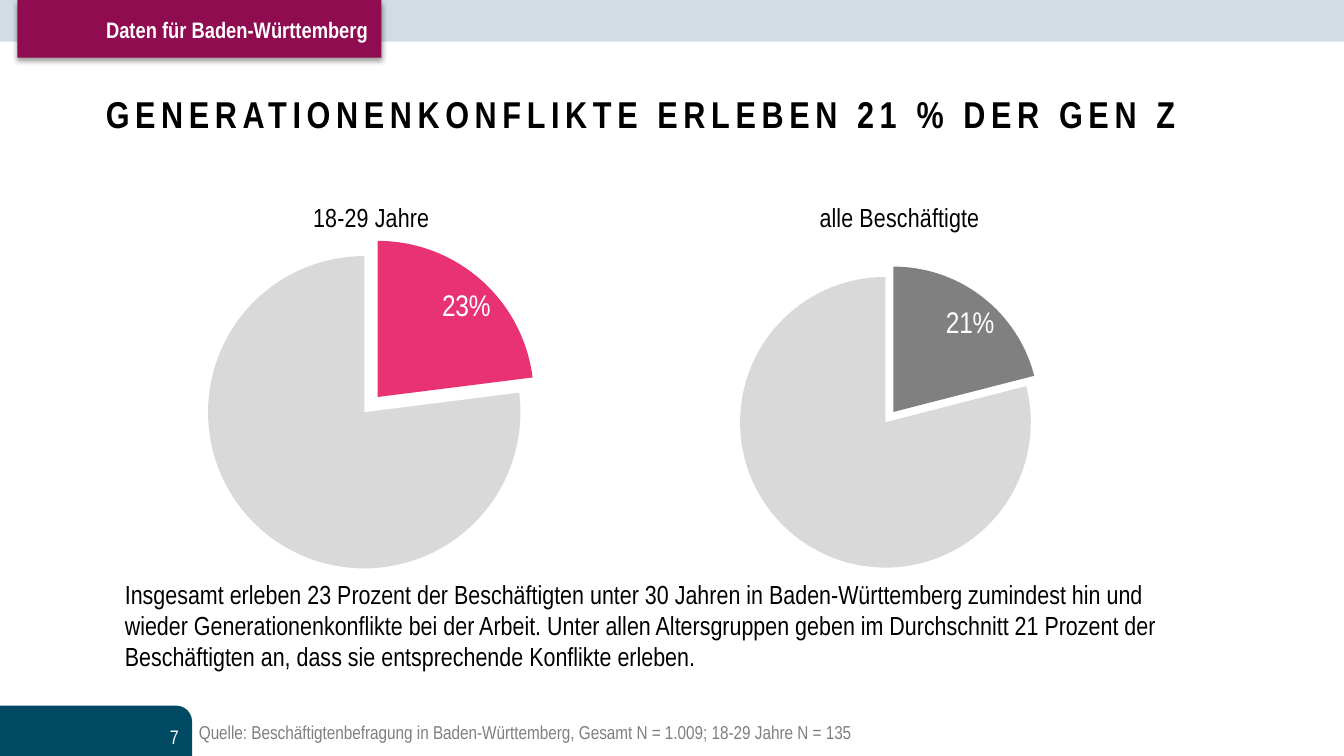
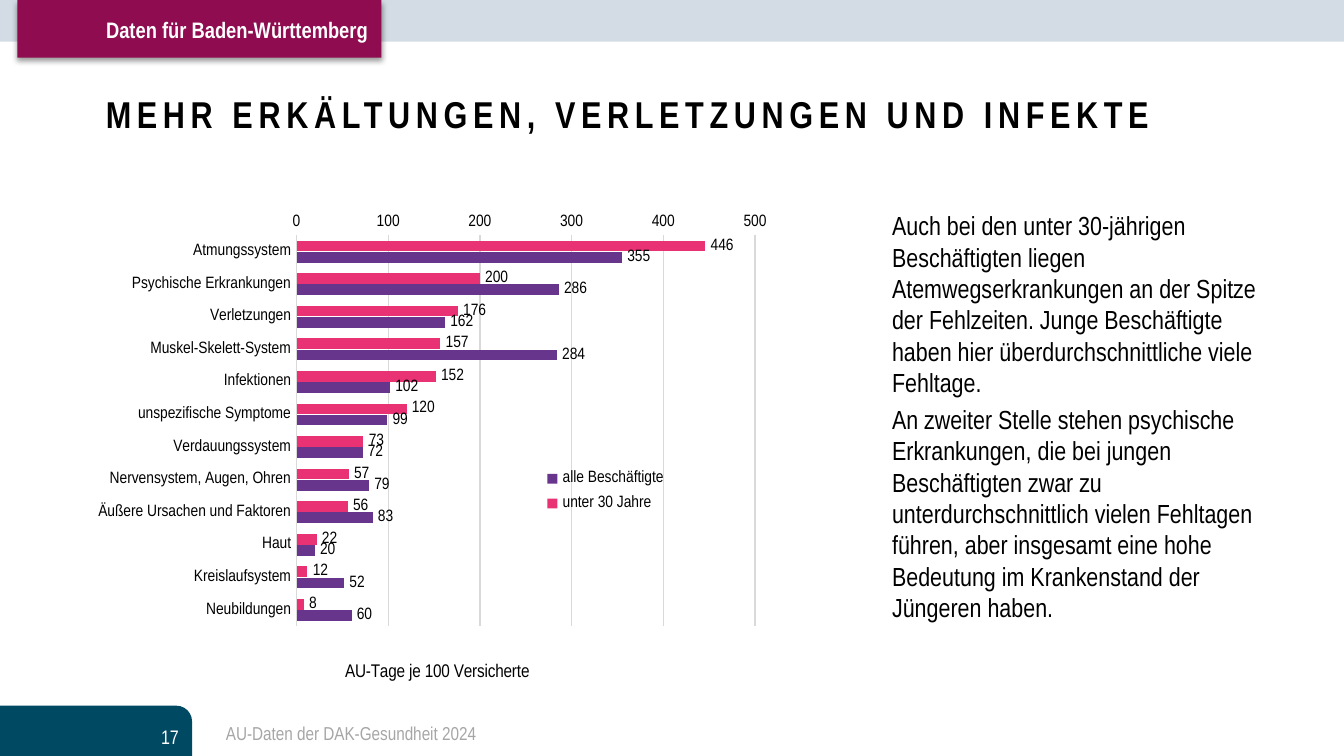
from dataclasses import dataclass

from lxml import etree
from pptx import Presentation
from pptx import util as u
from pptx.chart import data as cd
from pptx.dml.color import RGBColor
from pptx.enum import chart as ec, shapes as es, text as et
from pptx.oxml import ns


@dataclass(frozen=True)
class Theme:
    font: str = "Arial Narrow"
    ink: str = "000000"
    white: str = "FFFFFF"
    band: str = "D3DCE4"
    teal: str = "004963"
    wine: str = "8E0C4F"
    pink: str = "E83274"
    purple: str = "68358C"
    dark: str = "808080"
    rest: str = "D9D9D9"
    note: str = "7F7F7F"
    faint: str = "A6A6A6"
    head: float = 20
    value: float = 16
    body: float = 14
    tag: float = 12
    page: float = 10.5
    small: float = 10
    axis: float = 9


T = Theme()
WIDE, HIGH = 25.4, 14.29
FULL = (0, 0, WIDE, HIGH)
LEFT, MID = et.PP_ALIGN.LEFT, et.MSO_ANCHOR.MIDDLE
RIGHT, TOP = et.PP_ALIGN.RIGHT, et.MSO_ANCHOR.TOP


# --- Helpers ---

def rgb(color):
    return RGBColor.from_string(color)


def part(box, left, top, width, height):
    """Box in cm, placed from the corner of an outer box."""
    return box[0] + left, box[1] + top, width, height


def cm(box):
    return [u.Cm(n) for n in box]


def style(font, size, color=T.ink, bold=False):
    font.name, font.size, font.bold = T.font, u.Pt(size), bold
    font.color.rgb = rgb(color)


def write(para, words, size, color=T.ink, bold=False):
    run = para.add_run()
    run.text = words
    style(run.font, size, color, bold)
    return run


def label(slide, box, lines, size, color=T.ink, bold=False,
          align=LEFT, anchor=TOP, pad=None):
    frame = slide.shapes.add_textbox(*cm(box)).text_frame
    frame.word_wrap, frame.vertical_anchor = True, anchor
    if pad is not None:
        frame.margin_left = frame.margin_right = u.Cm(pad)
        frame.margin_top = frame.margin_bottom = u.Cm(pad)
    for i, line in enumerate(lines):
        para = frame.add_paragraph() if i else frame.paragraphs[0]
        para.alignment = align
        if i:
            para.space_before = u.Pt(size * 0.2)
        run = write(para, line, size, color, bold)
    return run


def block(slide, box, color, kind=es.MSO_SHAPE.RECTANGLE):
    shape = slide.shapes.add_shape(kind, *cm(box))
    shape.shadow.inherit = False
    shape.fill.solid()
    shape.fill.fore_color.rgb = rgb(color)
    shape.line.fill.background()
    return shape


def shade(shape):
    """Soft shadow straight below the shape."""
    effects = shape._element.spPr.find(ns.qn("a:effectLst"))
    outer = etree.SubElement(
        effects, ns.qn("a:outerShdw"), blurRad=str(u.Pt(3.1)),
        dist=str(u.Pt(1.6)), dir="5400000", rotWithShape="0")
    tint = etree.SubElement(outer, ns.qn("a:srgbClr"), val=T.ink)
    etree.SubElement(tint, ns.qn("a:alpha"), val="38000")


def layout(node, inner=False, **spots):
    """Fix a chart part at fractions (x, y, w, h) of the chart."""
    for old in node.findall(ns.qn("c:layout")):
        node.remove(old)
    outer = etree.Element(ns.qn("c:layout"))
    manual = etree.SubElement(outer, ns.qn("c:manualLayout"))
    items = {"layoutTarget": "inner"} if inner else {}
    items.update({"xMode": "edge", "yMode": "edge"})
    items.update({key: str(n) for key, n in spots.items()})
    for key, val in items.items():
        etree.SubElement(manual, ns.qn("c:" + key), val=val)
    lead = [k for k in node if k.tag in (ns.qn("c:tx"), ns.qn("c:legendPos"))]
    node.insert(node.index(lead[-1]) + 1 if lead else 0, outer)


def plot_box(chart, x, y, w, h):
    area = chart._chartSpace.chart.plotArea
    layout(area, inner=True, x=x, y=y, w=w, h=h)


def new_chart(slide, box, kind, cats, series):
    data = cd.CategoryChartData()
    data.categories = cats
    for name, vals in series:
        data.add_series(name, vals)
    chart = slide.shapes.add_chart(kind, *cm(box), data).chart
    style(chart.font, T.small)
    return chart


def values(series, size, color, place):
    tags = series.data_labels
    tags.show_value, tags.position = True, place
    style(tags.font, size, color)
    return tags


# --- Parts shared by all slides ---

def frame(slide, box, title, page):
    # Top band and page corner
    block(slide, part(box, 0, 0, WIDE, 0.79), T.band)
    foot = part(box, 0, 13.34, 3.63, 0.95)
    tab = block(slide, foot, T.teal, es.MSO_SHAPE.ROUND_1_RECTANGLE)
    tab.adjustments[0] = 0.31
    label(slide, part(foot, 0.86, 0.2, 2.77, 0.76), [page], T.page,
          T.white, align=RIGHT, anchor=MID)

    # Title
    run = label(slide, part(box, 1.75, 0.76, 21.9, 2.77), [title], T.head,
                bold=True, anchor=MID)
    run.font._element.set("spc", "300")

    # Region tag
    flag = part(box, 0.33, 0, 6.88, 1.09)
    shade(block(slide, flag, T.wine))
    label(slide, part(flag, 1.14, 0.18, 5.74, 0.76),
          ["Daten für Baden-Württemberg"], T.tag, T.white, True, RIGHT)


def source(slide, box, words, color):
    label(slide, box, [words], T.small, color, pad=0.13)


# --- Charts ---

def pie(slide, box, title, share, color, burst, area):
    chart = new_chart(slide, box, ec.XL_CHART_TYPE.PIE, ["1", ""],
                      [("Series 1", (share, round(1 - share, 2)))])
    chart.has_legend = False
    plot_box(chart, *area)

    # Heading
    chart.has_title = True
    head = chart.chart_title
    write(head.text_frame.paragraphs[0], title, T.body)
    layout(head._element, x=0.4, y=0.04)

    # Slices
    ring = chart.plots[0].series[0]
    for i, tone in enumerate((color, T.rest)):
        look = ring.points[i].format
        look.fill.solid()
        look.fill.fore_color.rgb = rgb(tone)
        look.line.fill.background()
    slot = ring._element.find(ns.qn("c:dPt"))
    push = etree.Element(ns.qn("c:explosion"), val=str(burst))
    slot.find(ns.qn("c:spPr")).addprevious(push)

    # Value on the first slice only
    tags = values(ring, T.value, T.white, ec.XL_LABEL_POSITION.BEST_FIT)
    tags.number_format, tags.number_format_is_linked = "0%", False
    mute = etree.Element(ns.qn("c:dLbl"))
    etree.SubElement(mute, ns.qn("c:idx"), val="1")
    etree.SubElement(mute, ns.qn("c:delete"), val="1")
    tags._element.insert(0, mute)


def bars(slide, box, rows):
    cats, young, total = zip(*rows)
    chart = new_chart(slide, box, ec.XL_CHART_TYPE.BAR_CLUSTERED, cats,
                      [("unter 30 Jahre", young),
                       ("alle Beschäftigte", total)])
    chart.has_title = False
    plot_box(chart, 0.305, 0.02, 0.66, 0.81)

    # Bars
    plot = chart.plots[0]
    plot.gap_width, plot.overlap = 100, -5
    plot.vary_by_categories = False
    for row, tone in zip(plot.series, (T.pink, T.purple)):
        row.invert_if_negative = False
        row.format.fill.solid()
        row.format.fill.fore_color.rgb = rgb(tone)
        values(row, T.axis, T.ink, ec.XL_LABEL_POSITION.OUTSIDE_END)

    # Axes
    names, scale = chart.category_axis, chart.value_axis
    for axis in (names, scale):
        axis.major_tick_mark = axis.minor_tick_mark = ec.XL_TICK_MARK.NONE
        style(axis.tick_labels.font, T.axis)
    names.reverse_order = True
    names.crosses = ec.XL_AXIS_CROSSES.MAXIMUM
    scale.minimum_scale, scale.maximum_scale = 0, 500
    scale.major_unit = 100
    scale.has_major_gridlines = True
    scale.format.line.fill.background()
    for line in (names.format.line, scale.major_gridlines.format.line):
        line.color.rgb, line.width = rgb(T.rest), u.Pt(0.75)
    unit = scale.axis_title
    write(unit.text_frame.paragraphs[0], "AU-Tage je 100 Versicherte",
          T.small)
    layout(unit._element, x=0.37, y=0.9)

    # Legend
    chart.has_legend = True
    key = chart.legend
    key.position = ec.XL_LEGEND_POSITION.RIGHT
    key.include_in_layout = True
    style(key.font, T.axis)
    layout(key._element, x=0.63, y=0.49, w=0.24, h=0.12)


# --- Slides ---

def conflict(slide, box):
    frame(slide, box, "GENERATIONENKONFLIKTE ERLEBEN 21 % DER GEN Z", "7")
    label(slide, part(box, 2.11, 10.8, 20.68, 2.18), [
        "Insgesamt erleben 23 Prozent der Beschäftigten unter 30 Jahren in "
        "Baden-Württemberg zumindest hin und wieder Generationenkonflikte "
        "bei der Arbeit. Unter allen Altersgruppen geben im Durchschnitt "
        "21 Prozent der Beschäftigten an, dass sie entsprechende Konflikte "
        "erleben."], T.body)
    source(slide, part(box, 3.63, 13.49, 18.67, 0.66),
           "Quelle: Beschäftigtenbefragung in Baden-Württemberg, "
           "Gesamt N = 1.009; 18-29 Jahre N = 135", T.note)
    pie(slide, part(box, 1.6, 3.48, 10.57, 7.57), "18-29 Jahre",
        0.23, T.pink, 13, (0.22, 0.18, 0.56, 0.78))
    pie(slide, part(box, 9.12, 3.48, 15.7, 7.57), "alle Beschäftigte",
        0.21, T.dark, 9, (0.31, 0.23, 0.35, 0.73))


def illness(slide, box):
    frame(slide, box, "MEHR ERKÄLTUNGEN, VERLETZUNGEN UND INFEKTE", "17")
    label(slide, part(box, 16.61, 3.84, 7.65, 7.82), [
        "Auch bei den unter 30-jährigen Beschäftigten liegen "
        "Atemwegserkrankungen an der Spitze der Fehlzeiten. Junge "
        "Beschäftigte haben hier überdurchschnittliche viele Fehltage.",
        "An zweiter Stelle stehen psychische Erkrankungen, die bei jungen "
        "Beschäftigten zwar zu unterdurchschnittlich vielen Fehltagen "
        "führen, aber insgesamt eine hohe Bedeutung im Krankenstand der "
        "Jüngeren haben."], T.body)
    source(slide, part(box, 4.14, 13.51, 18.34, 0.64),
           "AU-Daten der DAK-Gesundheit 2024", T.faint)
    bars(slide, part(box, 1.6, 4.04, 13.13, 9.35), [
        ("Atmungssystem", 446, 355),
        ("Psychische Erkrankungen", 200, 286),
        ("Verletzungen", 176, 162),
        ("Muskel-Skelett-System", 157, 284),
        ("Infektionen", 152, 102),
        ("unspezifische Symptome", 120, 99),
        ("Verdauungssystem", 73, 72),
        ("Nervensystem, Augen, Ohren", 57, 79),
        ("Äußere Ursachen und Faktoren", 56, 83),
        ("Haut", 22, 20),
        ("Kreislaufsystem", 12, 52),
        ("Neubildungen", 8, 60)])


def main():
    deck = Presentation()
    deck.slide_width, deck.slide_height = u.Cm(WIDE), u.Cm(HIGH)
    for build in (conflict, illness):
        build(deck.slides.add_slide(deck.slide_layouts[6]), FULL)
    deck.save("out.pptx")


if __name__ == "__main__":
    main()
